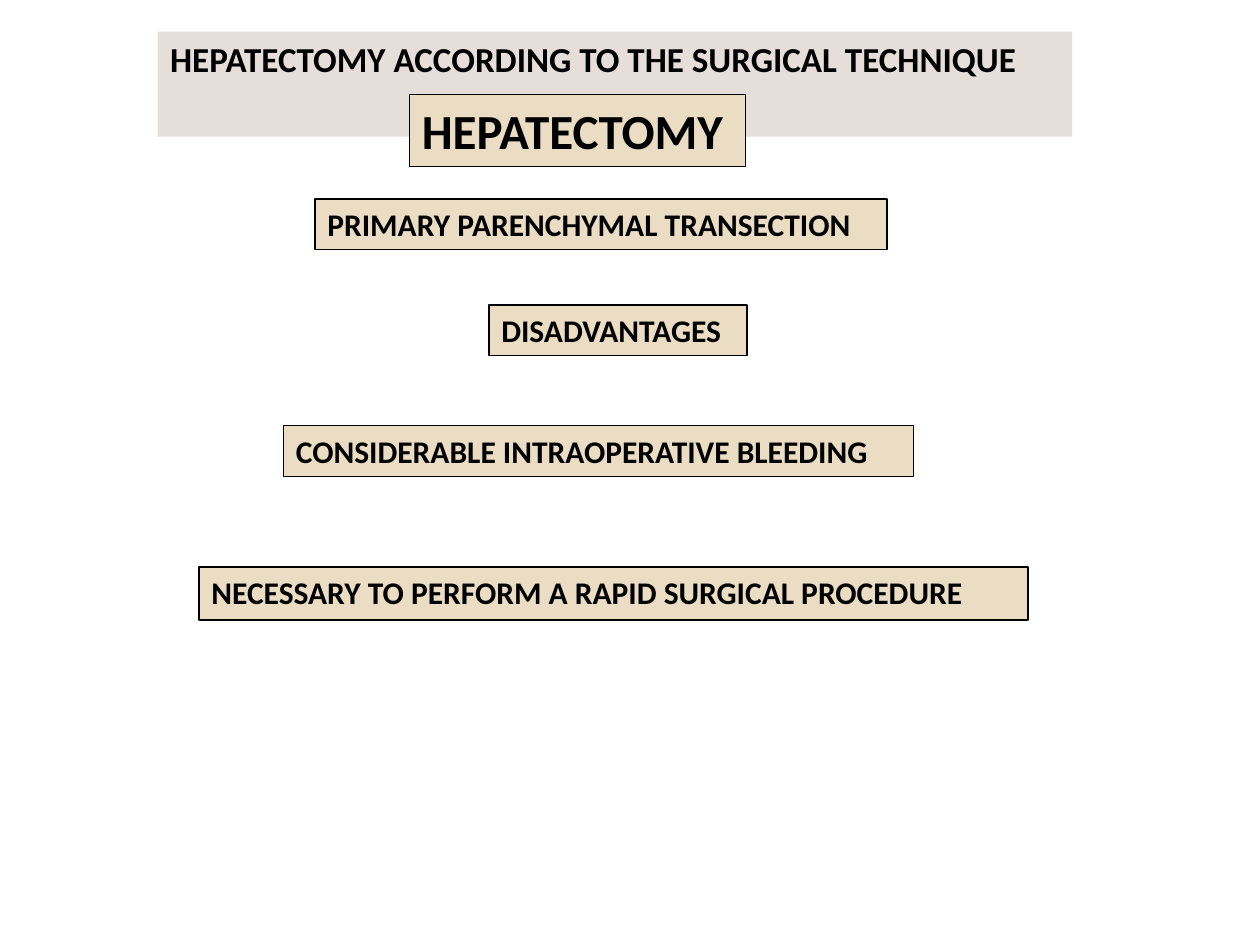
from pptx import Presentation
from pptx import util as u
from pptx.dml.color import RGBColor
from pptx.enum import text

COLOURS = {"heading": "E6DEDB", "step": "EBDDC3", "ink": "000000"}

# wording, left, top, width, height, text size
STEPS = [
    ("HEPATECTOMY", 3.25, 0.75, 2.67, 0.57, 28),
    ("PRIMARY PARENCHYMAL TRANSECTION", 2.5, 1.58, 4.54, 0.4, 18),
    ("DISADVANTAGES", 3.88, 2.42, 2.05, 0.4, 18),
    ("CONSIDERABLE INTRAOPERATIVE BLEEDING", 2.25, 3.38, 5, 0.4, 18),
    ("NECESSARY TO PERFORM A RAPID SURGICAL PROCEDURE", 1.58, 4.5, 6.58, 0.42, 18),
]


class SlideBuilder:
    """Holds the style and the current slide."""

    font_name = "Calibri"
    line_width = u.Pt(0.75)

    def __init__(self, deck):
        self.page = deck.slides.add_slide(deck.slide_layouts[5])

    def colour(self, name):
        return RGBColor.from_string(COLOURS[name])

    def fill_and_label(self, box, wording, size, fill):
        box.fill.solid()
        box.fill.fore_color.rgb = self.colour(fill)
        frame = box.text_frame
        frame.text = wording
        frame.word_wrap = True
        frame.auto_size = text.MSO_AUTO_SIZE.SHAPE_TO_FIT_TEXT
        frame.vertical_anchor = text.MSO_ANCHOR.TOP
        para = frame.paragraphs[0]
        para.alignment = text.PP_ALIGN.LEFT
        para.font.name = self.font_name
        para.font.size = u.Pt(size)
        para.font.bold = True
        para.font.color.rgb = self.colour("ink")

    def heading(self, wording, left, top, width, height, size):
        box = self.page.shapes.title
        box.left, box.top = u.Inches(left), u.Inches(top)
        box.width, box.height = u.Inches(width), u.Inches(height)
        self.fill_and_label(box, wording, size, "heading")

    def step(self, wording, left, top, width, height, size):
        box = self.page.shapes.add_textbox(
            u.Inches(left), u.Inches(top), u.Inches(width), u.Inches(height))
        self.fill_and_label(box, wording, size, "step")
        box.line.color.rgb = self.colour("ink")
        box.line.width = self.line_width


def main():
    deck = Presentation()
    deck.slide_width, deck.slide_height = u.Inches(10), u.Inches(7.5)
    builder = SlideBuilder(deck)
    builder.heading("HEPATECTOMY ACCORDING TO THE SURGICAL TECHNIQUE",
                    1.25, 0.25, 7.26, 0.44, 20)
    for step in STEPS:
        builder.step(*step)
    deck.save("out.pptx")


if __name__ == "__main__":
    main()
